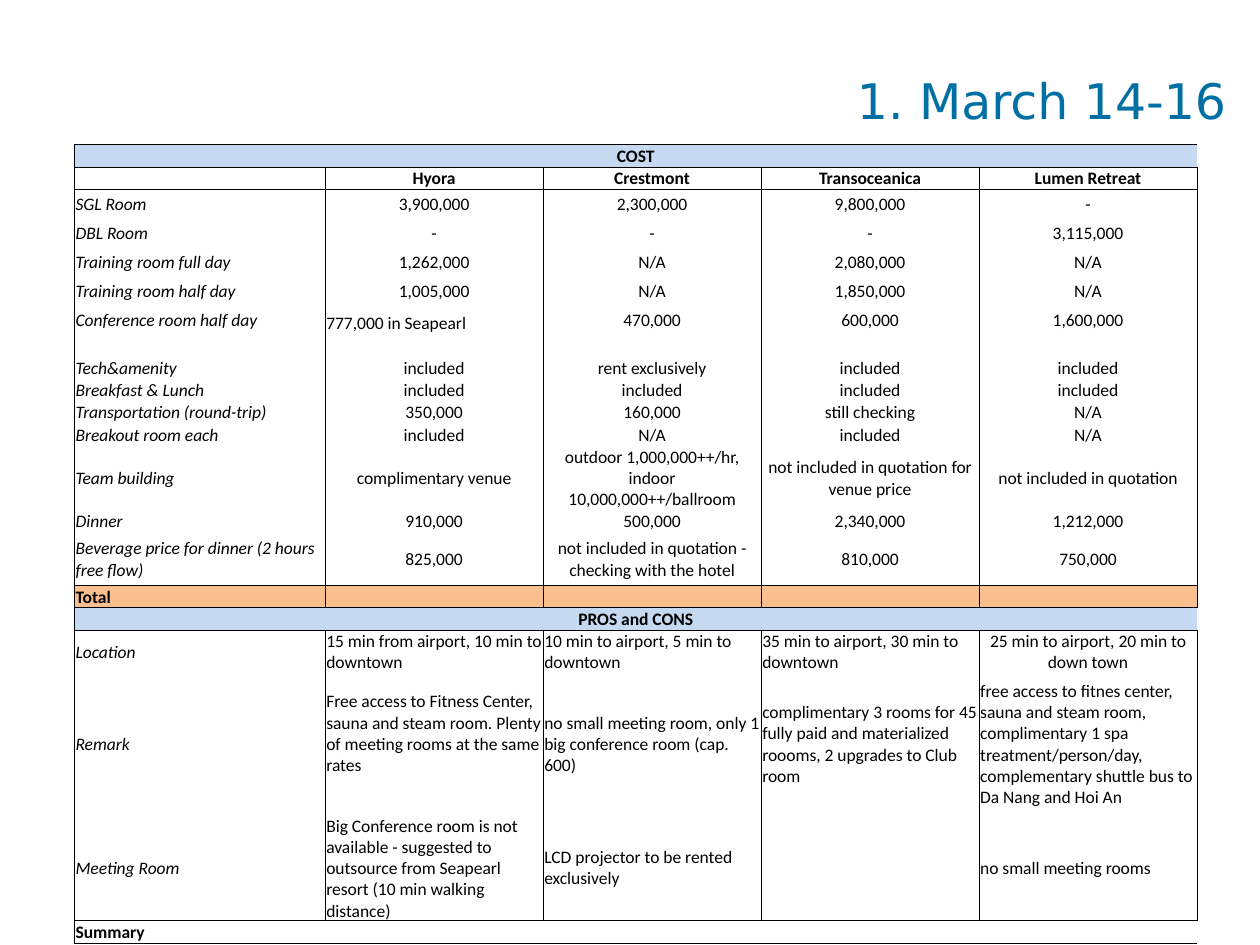
"""Build a slide that compares four hotels by cost, pros and cons."""
from lxml.etree import SubElement as Sub
from pptx import Presentation as Deck
from pptx.dml.color import RGBColor as Rgb
from pptx.enum.text import MSO_ANCHOR as Anchor, PP_ALIGN as Align
from pptx.oxml.ns import qn
from pptx.util import Inches as In, Pt

BLACK = Rgb(0x00, 0x00, 0x00)
TEAL = Rgb(0x00, 0x6F, 0xA3)
BLUE = Rgb(0xC5, 0xD9, 0xF1)
PEACH = Rgb(0xFA, 0xBF, 0x8F)

WIDE, HIGH = 10, 7.5
COLS = [1.99] + [1.73] * 4
LOW, MID, TALL = 0.16, 0.23, 0.42
BODY = {"size": Pt(10), "name": "Calibri"}
HEAD = {"size": Pt(28), "name": "DejaVu Sans"}
PAD = {"margin_left": In(0.01), "margin_right": In(0.01),
       "margin_top": In(0.01), "margin_bottom": 0,
       "vertical_anchor": Anchor.MIDDLE}

KINDS = {
    "band": {"edge": "TB", "fill": BLUE, "bold": True, "open": True},
    "head": {"edge": "TB", "bold": True},
    "cost": {"edge": ""},
    "first": {"edge": "T"},
    "last": {"edge": "B"},
    "total": {"edge": "TB", "fill": PEACH, "bold": True},
    "pros": {"edge": "", "left": True},
    "top": {"edge": "T", "left": True},
    "end": {"edge": "B", "left": True},
    "sum": {"edge": "TB", "bold": True, "open": True},
}

ROWS = [
    ("band", LOW, ["COST"]),
    ("head", LOW, ["", "Hyora", "Crestmont", "Transoceanica", "Lumen Retreat"]),
    ("first", MID, ["SGL Room", "3,900,000", "2,300,000", "9,800,000", "-"]),
    ("cost", MID, ["DBL Room", "-", "-", "-", "3,115,000"]),
    ("cost", MID, ["Training room full day", "1,262,000", "N/A", "2,080,000", "N/A"]),
    ("cost", MID, ["Training room half day", "1,005,000", "N/A", "1,850,000", "N/A"]),
    ("cost", MID, ["Conference room half day", "777,000 in Seapearl", "470,000",
                   "600,000", "1,600,000"]),
    ("cost", LOW, []),
    ("cost", LOW, ["Tech&amenity", "included", "rent exclusively", "included", "included"]),
    ("cost", LOW, ["Breakfast & Lunch"] + ["included"] * 4),
    ("cost", LOW, ["Transportation (round-trip)", "350,000", "160,000",
                   "still checking", "N/A"]),
    ("cost", LOW, ["Breakout room each", "included", "N/A", "included", "N/A"]),
    ("cost", TALL, ["Team building", "complimentary venue",
                    "outdoor 1,000,000++/hr, indoor 10,000,000++/ballroom",
                    "not included in quotation for venue price",
                    "not included in quotation"]),
    ("cost", LOW, ["Dinner", "910,000", "500,000", "2,340,000", "1,212,000"]),
    ("last", TALL, ["Beverage price for dinner (2 hours free flow)", "825,000",
                    "not included in quotation - checking with the hotel",
                    "810,000", "750,000"]),
    ("total", LOW, ["Total"]),
    ("band", LOW, ["PROS and CONS"]),
    ("top", 0.32, ["Location", "15 min from airport, 10 min to downtown",
                   "10 min to airport, 5 min to downtown",
                   "35 min to airport, 30 min to downtown",
                   "25 min to airport, 20 min to down town"]),
    ("pros", 1.12, ["Remark",
                    "Free access to Fitness Center, sauna and steam room. "
                    "Plenty of meeting rooms at the same rates",
                    "no small meeting room, only 1 big conference room (cap. 600)",
                    "complimentary 3 rooms for 45 fully paid and materialized "
                    "roooms, 2 upgrades to Club room",
                    "free access to fitnes center, sauna and steam room, "
                    "complimentary 1 spa treatment/person/day, "
                    "complementary shuttle bus to Da Nang and Hoi An"]),
    ("end", 0.84, ["Meeting Room",
                   "Big Conference room is not available - suggested to outsource "
                   "from Seapearl resort (10 min walking distance)",
                   "LCD projector to be rented exclusively", "",
                   "no small meeting rooms"]),
    ("sum", LOW, ["Summary"]),
]

ODD = {
    (6, 1): ({"vertical_anchor": Anchor.BOTTOM}, Align.LEFT),
    (17, 4): ({}, Align.CENTER),
    (18, 1): ({"margin_bottom": In(0.17)}, Align.LEFT),
}


def put(thing, vals):
    """Set each named value on an object."""
    for name, val in vals.items():
        setattr(thing, name, val)


def write(para, text, font, color, align):
    """Put one styled run in a paragraph."""
    para.alignment = align
    run = para.add_run()
    run.text = text
    put(run.font, font)
    run.font.color.rgb = color


def rule(cell, edges):
    """Draw thin lines on the given edges and none on the rest."""
    props = cell._tc.get_or_add_tcPr()
    for side in "LRTB":
        line = Sub(props, qn("a:ln" + side), w=str(Pt(0.5)))
        if side in edges:
            Sub(Sub(line, qn("a:solidFill")), qn("a:srgbClr"), val=str(BLACK))
        else:
            Sub(line, qn("a:noFill"))


def paint(cell, color):
    """Fill a cell, or leave it clear."""
    if color is None:
        cell.fill.background()
    else:
        cell.fill.solid()
        cell.fill.fore_color.rgb = color


def fit(cell, row, col, kind, text):
    """Style one cell and write its text."""
    look = KINDS[kind]
    sides = "LR"
    if look.get("open"):
        sides = "L" if col == 0 else ""
    rule(cell, sides + look["edge"])
    paint(cell, look.get("fill"))
    mid = kind == "band" or (col > 0 and not look.get("left"))
    pad, align = ODD.get((row, col), ({}, Align.CENTER if mid else Align.LEFT))
    put(cell, PAD | pad)
    para = cell.text_frame.paragraphs[0]
    if text:
        bold = look.get("bold", False)
        font = BODY | {"bold": bold, "italic": col == 0 and not bold}
        write(para, text, font, BLACK, align)
    else:
        Sub(para._p, qn("a:endParaRPr"), sz="1000")


def grid(slide):
    """Add the table of hotels."""
    tall = sum(high for _, high, _ in ROWS)
    box = [In(n) for n in (0.059 * WIDE, 0.153 * HIGH, sum(COLS), tall)]
    table = slide.shapes.add_table(len(ROWS), len(COLS), *box).table
    put(table, {"first_row": False, "horz_banding": False})
    for col, wide in zip(table.columns, COLS):
        col.width = In(wide)
    for row, (kind, high, texts) in enumerate(ROWS):
        table.rows[row].height = In(high)
        for col in range(len(COLS)):
            text = texts[col] if col < len(texts) else ""
            fit(table.cell(row, col), row, col, kind, text)
        if kind == "band":
            table.cell(row, 0).merge(table.cell(row, len(COLS) - 1))


def title(slide, text):
    """Add the heading at the top right."""
    box = [In(n) for n in (0.264 * WIDE, 0.075 * HIGH, 0.709 * WIDE, 0.09 * HIGH)]
    frame = slide.shapes.add_textbox(*box).text_frame
    put(frame, {"margin_left": 0, "margin_right": 0, "margin_top": 0,
                "margin_bottom": 0, "word_wrap": True})
    write(frame.paragraphs[0], text, HEAD, TEAL, Align.RIGHT)


def main():
    """Build and save the slide."""
    deck = Deck()
    put(deck, {"slide_width": In(WIDE), "slide_height": In(HIGH)})
    slide = deck.slides.add_slide(deck.slide_layouts[6])
    title(slide, "1. March 14-16")
    grid(slide)
    deck.save("out.pptx")


if __name__ == "__main__":
    main()
